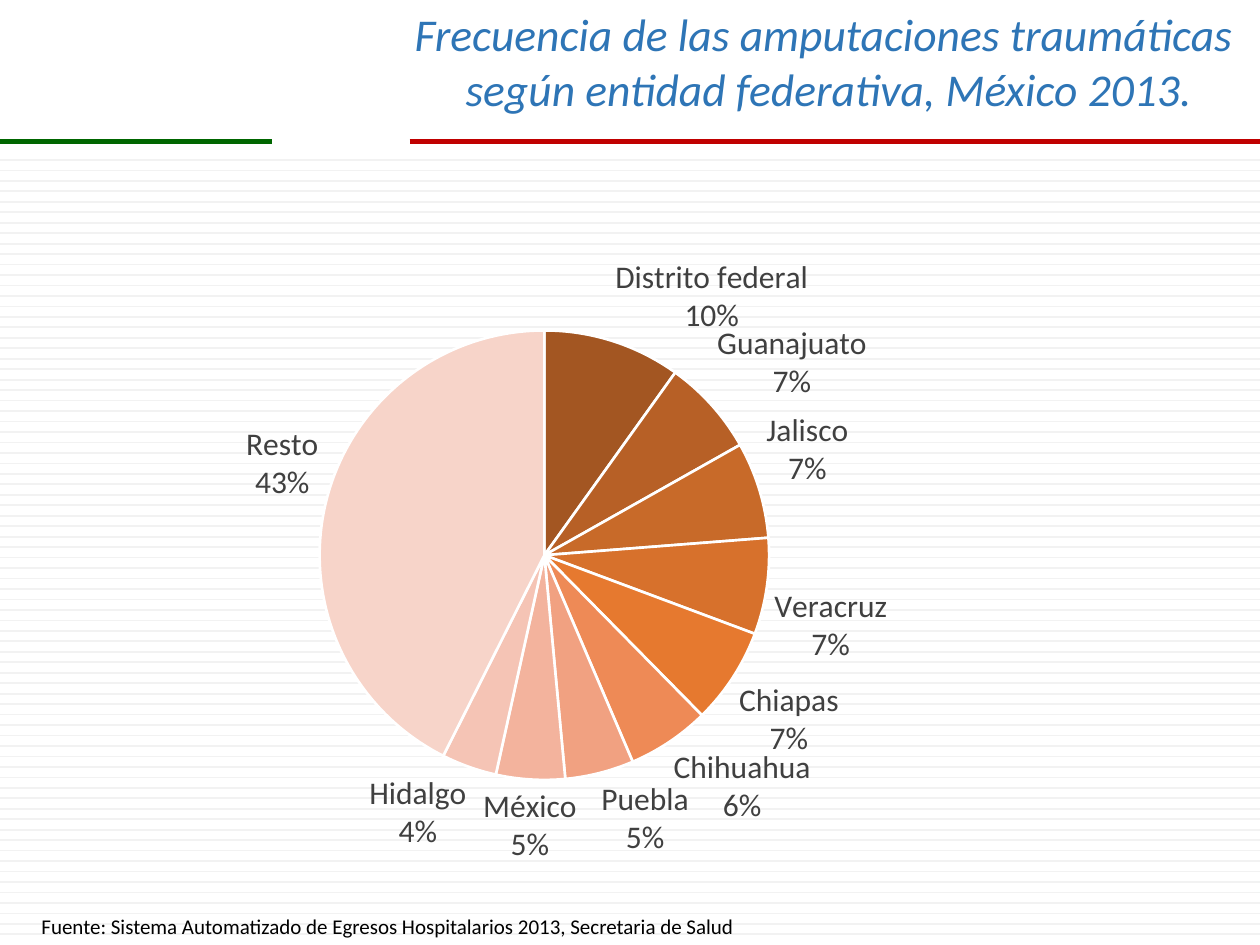
from pptx import Presentation
from pptx.chart.data import CategoryChartData as Data
from pptx.dml.color import RGBColor
from pptx.enum.chart import XL_CHART_TYPE as Kind, XL_LABEL_POSITION as Pos
from pptx.enum.shapes import MSO_CONNECTOR as Conn
from pptx.enum.text import MSO_ANCHOR as Anchor, MSO_AUTO_SIZE as Fit, PP_ALIGN as Align
from pptx.oxml import parse_xml
from pptx.oxml.ns import nsdecls, qn
from pptx.util import Pt

FACE = "Calibri"
TITLE = ["Frecuencia de las amputaciones traumáticas ",
         "según entidad federativa, México 2013."]
SOURCE = "Fuente: Sistema Automatizado de Egresos Hospitalarios 2013, Secretaria de Salud"
STATES = [
    ("Distrito federal", 10, "A35622"),
    ("Guanajuato", 7, "B76026"),
    ("Jalisco", 7, "C86A29"),
    ("Veracruz", 7, "D7712C"),
    ("Chiapas", 7, "E6792F"),
    ("Chihuahua", 6, "EE8A56"),
    ("Puebla", 5, "F1A181"),
    ("México", 5, "F3B39D"),
    ("Hidalgo", 4, "F5C4B5"),
    ("Resto", 43, "F7D4C9"),
]
WIDE, HIGH = 720, 540
STRIPES, FIRST, STEP = 75, 91.4, 5.98
BARS = [(0, 155.5, "006600"), (234, WIDE, "C00000")]
BAR_Y = 80.8
CHART = (16.6, 135.4, 614.2, 368.6)
PIE = {"x": 0.27, "y": 0.145, "w": 0.419, "h": 0.697}


def color(text):
    return RGBColor.from_string(text)


def style(font, size, tint):
    font.name, font.size = FACE, Pt(size)
    font.color.rgb = color(tint)


def rule(slide, left, right, top, tint, width):
    line = slide.shapes.add_connector(Conn.STRAIGHT, Pt(left), Pt(top), Pt(right), Pt(top))
    line.line.color.rgb = color(tint)
    line.line.width = Pt(width)
    line._element.spPr.append(parse_xml(f"<a:effectLst {nsdecls('a')}/>"))


def place(shape, left, top, width, height):
    shape.left, shape.top, shape.width, shape.height = map(Pt, (left, top, width, height))


def add_title(slide):
    title = slide.shapes.title
    place(title, 130.3, 0, 686.9, 70.6)
    frame = title.text_frame
    frame.text = "\n".join(TITLE)
    frame.word_wrap, frame.auto_size = True, Fit.NONE
    frame.vertical_anchor = Anchor.TOP
    for para in frame.paragraphs:
        para.alignment = Align.CENTER
        for run in para.runs:
            style(run.font, 26, "2E75B6")
            run.font.italic = True


def add_source(slide):
    box = slide.shapes.add_textbox(Pt(16.6), Pt(518.4), Pt(594.7), Pt(21.6))
    box.text_frame.word_wrap = True
    box.text_frame.text = SOURCE
    style(box.text_frame.paragraphs[0].runs[0].font, 12, "000000")


def add_pie(slide):
    data = Data()
    data.categories = [name for name, _, _ in STATES]
    data.add_series("Series 1", [value for _, value, _ in STATES])
    chart = slide.shapes.add_chart(Kind.PIE, *map(Pt, CHART), data).chart
    chart.has_title = chart.has_legend = False
    style(chart.font, 18, "000000")
    plot = chart.plots[0]
    plot.vary_by_categories = True
    for index, (_, _, tint) in enumerate(STATES):
        form = plot.series[0].points[index].format
        form.fill.solid()
        form.fill.fore_color.rgb = color(tint)
        form.line.color.rgb = color("FFFFFF")
        form.line.width = Pt(1.5)
    labels = plot.series[0].data_labels
    style(labels.font, 18, "404040")
    labels.number_format, labels.number_format_is_linked = "0%", False
    labels.position = Pos.OUTSIDE_END
    labels.show_category_name = labels.show_percentage = True
    labels.show_value = False
    mark = labels._element.find(qn("c:showBubbleSize"))
    mark.addnext(parse_xml(f"<c:separator {nsdecls('c')}>\n</c:separator>"))
    area = chart._chartSpace.find(".//" + qn("c:plotArea"))
    for old in area.findall(qn("c:layout")):
        area.remove(old)
    modes = "".join(f'<c:{key}Mode val="edge"/>' for key in "xy")
    sizes = "".join(f'<c:{key} val="{part}"/>' for key, part in PIE.items())
    area.insert(0, parse_xml(
        f'<c:layout {nsdecls("c")}><c:manualLayout><c:layoutTarget val="inner"/>'
        f"{modes}{sizes}</c:manualLayout></c:layout>"))


def main():
    """Build the slide on amputations by state."""
    deck = Presentation()
    deck.slide_width, deck.slide_height = Pt(WIDE), Pt(HIGH)
    slide = deck.slides.add_slide(deck.slide_layouts[5])
    for index in range(STRIPES):
        rule(slide, 0, WIDE, FIRST + index * STEP, "F2F2F2", 1)
    for left, right, tint in BARS:
        rule(slide, left, right, BAR_Y, tint, 3)
    add_source(slide)
    add_title(slide)
    add_pie(slide)
    deck.save("out.pptx")


if __name__ == "__main__":
    main()
